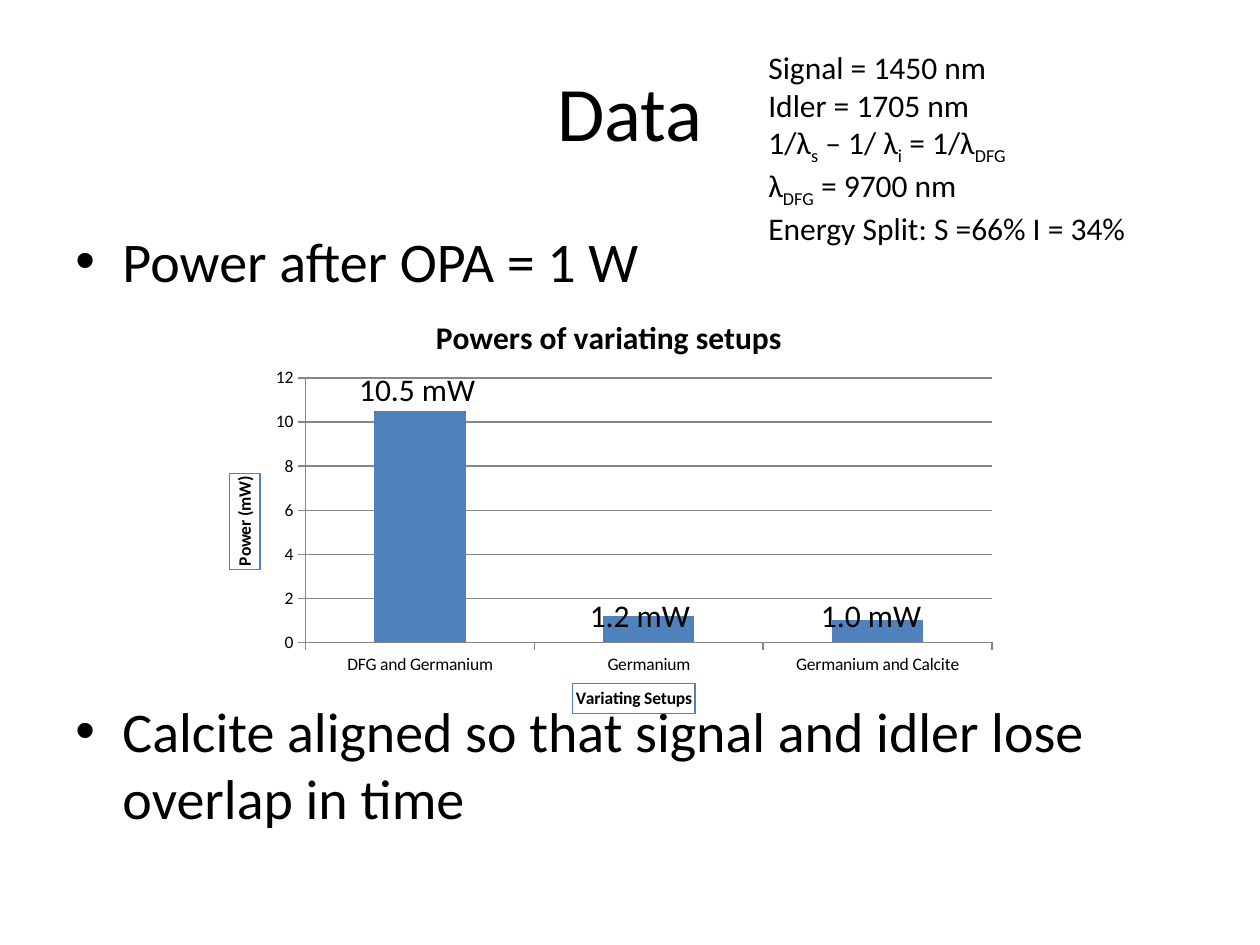
import pptx
import pptx.util
import pptx.chart.data
import pptx.dml.color
import pptx.enum.chart
import pptx.enum.text
import pptx.oxml
from pptx.oxml.ns import nsdecls
from pptx.util import Cm, Pt

THEME = {
    "font": "Calibri",
    "text": "000000", "bar": "4F81BD", "axis": "868686",
    "title": 44, "body": 32, "note": 18, "axis_text": 10,
}

TITLE = ("Data", (1.27, 0.64, 22.86, 3.18))
BULLETS = [("Power after OPA = 1 W", 0),
           ("Calcite aligned so that signal and idler lose overlap in time", 230)]
BULLET_BOX = (1.27, 4.45, 22.86, 13.76)
INDENT = 0.95

# Odd entries of each line are subscripts
WAVELENGTHS = [
    ["Signal = 1450 nm"],
    ["Idler = 1705 nm"],
    ["1/λ", "s", " – 1/ λ", "i", " = 1/λ", "DFG"],
    ["λ", "DFG", " = 9700 nm"],
    ["Energy Split: S =66% I = 34%"],
]
WAVELENGTH_BOX = (15.24, 0.84, 8.05, 4.11)

CHART = {
    "title": "Powers of variating setups",
    "x": "Variating Setups", "y": "Power (mW)",
    "data": {"DFG and Germanium": 10.5, "Germanium": 1.2, "Germanium and Calcite": 1},
    "box": (4.23, 5.93, 16.09, 8.89),
    "plot": {"x": 0.12, "y": 0.19, "w": 0.86, "h": 0.6},
}
BAR_LABELS = [("1.2 mW", 11.64, 11.89), ("1.0 mW", 16.3, 11.89), ("10.5 mW", 6.99, 7.34)]
LABEL_SIZE = (3.18, 1.02)


def rgb(name):
    return pptx.dml.color.RGBColor.from_string(THEME[name])


def style(font, size, bold=False):
    for name, value in {"name": THEME["font"], "size": Pt(THEME[size]), "bold": bold}.items():
        setattr(font, name, value)
    font.color.rgb = rgb("text")


def add_lines(slide, box, lines, size):
    """Add a text box; every second run of a line is a subscript."""
    tf = slide.shapes.add_textbox(*map(Cm, box)).text_frame
    tf.word_wrap = True
    for i, runs in enumerate(lines):
        p = tf.paragraphs[0] if i == 0 else tf.add_paragraph()
        for j, text in enumerate(runs):
            r = p.add_run()
            r.text = text
            style(r.font, size)
            if j % 2:
                r._r.get_or_add_rPr().set("baseline", "-25000")
    return tf


def add_bullet(p, space_before):
    p.space_before = Pt(space_before)
    pPr = p._p.get_or_add_pPr()
    pPr.set("marL", str(Cm(INDENT)))
    pPr.set("indent", str(-Cm(INDENT)))
    for tag in ('<a:buFont {} typeface="Arial"/>', '<a:buChar {} char="•"/>'):
        pPr.append(pptx.oxml.parse_xml(tag.format(nsdecls("a"))))


def set_title(owner, text, size):
    tf = owner.text_frame
    tf.text = text
    style(tf.paragraphs[0].runs[0].font, size, bold=True)


def add_power_chart(slide):
    data = pptx.chart.data.CategoryChartData()
    data.categories = list(CHART["data"])
    data.add_series("Series 1", list(CHART["data"].values()))
    chart = slide.shapes.add_chart(pptx.enum.chart.XL_CHART_TYPE.COLUMN_CLUSTERED,
                                   *map(Cm, CHART["box"]), data).chart
    style(chart.font, "axis_text")
    chart.has_legend = False
    set_title(chart.chart_title, CHART["title"], "note")
    chart.chart_title.include_in_layout = False

    plot = chart.plots[0]
    plot.gap_width = 150
    plot.vary_by_categories = False
    fill = plot.series[0].format.fill
    fill.solid()
    fill.fore_color.rgb = rgb("bar")

    for axis, text in ((chart.category_axis, CHART["x"]), (chart.value_axis, CHART["y"])):
        set_title(axis.axis_title, text, "axis_text")
        border = axis.axis_title.format.line
        border.color.rgb = rgb("bar")
        border.width = Pt(0.75)
        axis.format.line.color.rgb = rgb("axis")
        axis.major_tick_mark = pptx.enum.chart.XL_TICK_MARK.OUTSIDE
    value = chart.value_axis
    value.minimum_scale, value.maximum_scale, value.major_unit = 0, 12, 2
    value.major_gridlines.format.line.color.rgb = rgb("axis")

    area = chart._chartSpace.chart.plotArea
    for layout in area.findall(pptx.oxml.ns.qn("c:layout")):
        area.remove(layout)
    sizes = "".join(f'<c:{k} val="{v}"/>' for k, v in CHART["plot"].items())
    area.insert(0, pptx.oxml.parse_xml(
        f'<c:layout {nsdecls("c")}><c:manualLayout><c:layoutTarget val="inner"/>'
        f'<c:xMode val="edge"/><c:yMode val="edge"/>{sizes}</c:manualLayout></c:layout>'))


def main():
    prs = pptx.Presentation()
    prs.slide_width, prs.slide_height = Cm(25.4), Cm(19.05)
    s = prs.slides.add_slide(prs.slide_layouts[5])

    text, box = TITLE
    title = s.shapes.title
    title.left, title.top, title.width, title.height = map(Cm, box)
    title.text_frame.text = text
    title.text_frame.vertical_anchor = pptx.enum.text.MSO_ANCHOR.MIDDLE
    p = title.text_frame.paragraphs[0]
    p.alignment = pptx.enum.text.PP_ALIGN.CENTER
    style(p.runs[0].font, "title")

    tf = add_lines(s, BULLET_BOX, [[text] for text, _ in BULLETS], "body")
    for p, (_, space) in zip(tf.paragraphs, BULLETS):
        add_bullet(p, space)

    add_lines(s, WAVELENGTH_BOX, WAVELENGTHS, "note")
    add_power_chart(s)
    for text, left, top in BAR_LABELS:
        add_lines(s, (left, top, *LABEL_SIZE), [[text]], "note")
    prs.save("out.pptx")


if __name__ == "__main__":
    main()
